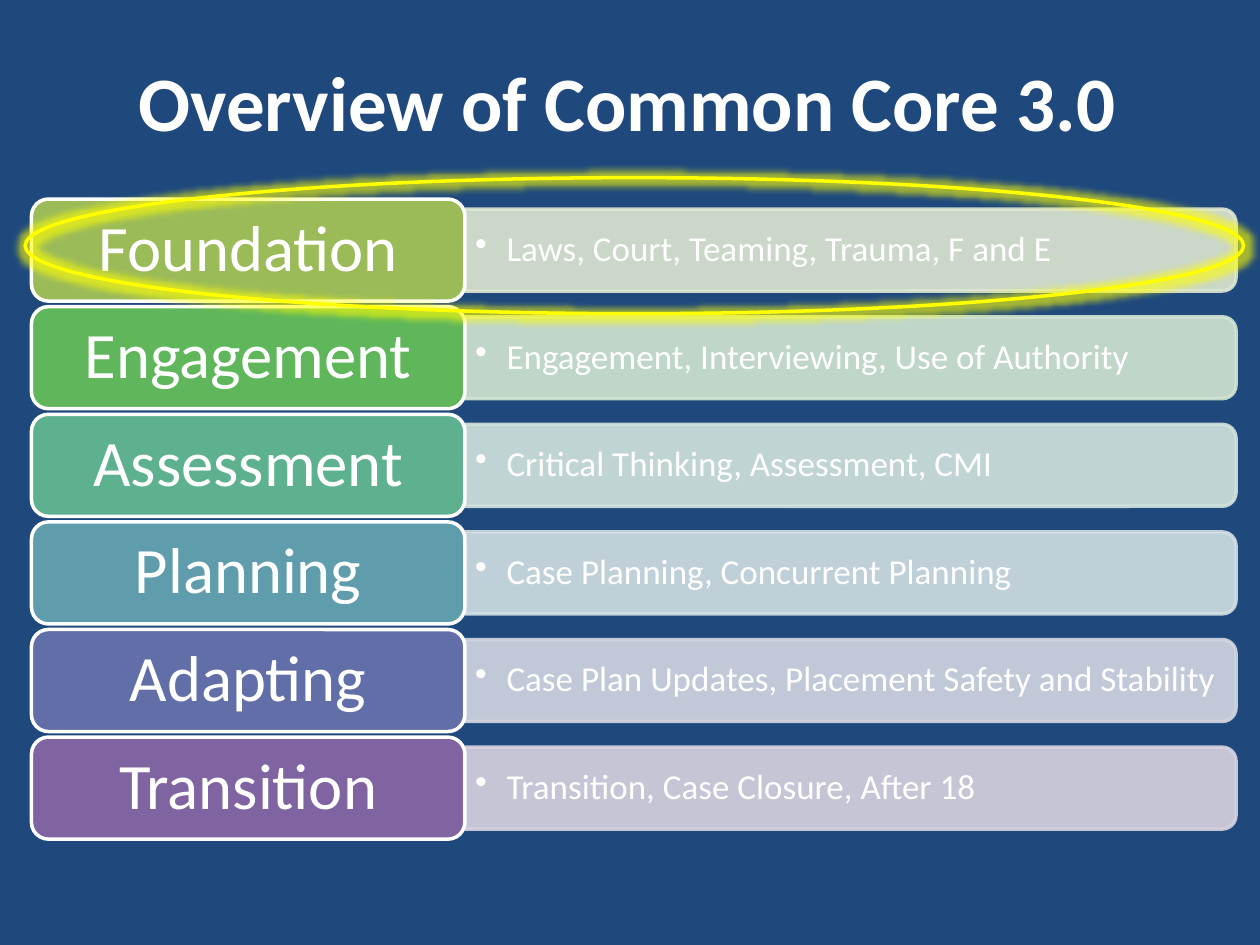
from lxml import etree
from pptx import Presentation
from pptx.dml.color import RGBColor
from pptx.enum.shapes import MSO_SHAPE as Preset
from pptx.enum.text import MSO_ANCHOR as Anchor, PP_ALIGN as Align
from pptx.oxml.ns import qn
from pptx.util import Inches, Pt

WHITE = "FFFFFF"
YELLOW = "FFFF00"
NAVY = "1F497D"

# Label, topics, label colour, band colour
MODULES = [
    ("Foundation", "Laws, Court, Teaming, Trauma, F and E", "9BBB59", "DEE7D1"),
    ("Engagement", "Engagement, Interviewing, Use of Authority", "5FB65B", "D2E6D2"),
    ("Assessment", "Critical Thinking, Assessment, CMI", "5DB18E", "D2E4DD"),
    ("Planning", "Case Planning, Concurrent Planning", "5F9DAC", "D2DFE3"),
    ("Adapting", "Case Plan Updates, Placement Safety and Stability", "626EA7", "D3D6E1"),
    ("Transition", "Transition, Case Closure, After 18", "8064A2", "D8D3E0"),
]


def color(hex_string):
    return RGBColor.from_string(hex_string)


def add_alpha(color_element, percent):
    alpha = etree.SubElement(color_element, qn("a:alpha"))
    alpha.set("val", str(percent * 1000))


def write_text(shape, text, size, align, insets, bold=False, line_spacing=1.0):
    """Write one white, vertically centred paragraph and return it."""
    frame = shape.text_frame
    side, edge = Inches(insets[0]), Inches(insets[1])
    frame_format = {
        "word_wrap": True, "vertical_anchor": Anchor.MIDDLE,
        "margin_left": side, "margin_right": side,
        "margin_top": edge, "margin_bottom": edge,
    }
    for name, value in frame_format.items():
        setattr(frame, name, value)
    paragraph = frame.paragraphs[0]
    paragraph.alignment = align
    paragraph.line_spacing = line_spacing
    run = paragraph.add_run()
    run.text = text
    for name, value in {"name": "Calibri", "size": Pt(size), "bold": bold}.items():
        setattr(run.font, name, value)
    run.font.color.rgb = color(WHITE)
    return paragraph


def add_bullet(paragraph, indent):
    properties = paragraph._p.get_or_add_pPr()
    properties.set("marL", str(Inches(indent)))
    properties.set("indent", str(-Inches(indent)))
    etree.SubElement(properties, qn("a:buChar")).set("char", "•")


def add_outlined(slide, preset, box, line_color, fill_color=None, opacity=100):
    shape = slide.shapes.add_shape(preset, *map(Inches, box))
    shape.shadow.inherit = False
    shape.line.width = Pt(2)
    shape.line.color.rgb = color(line_color)
    if fill_color:
        shape.fill.solid()
        shape.fill.fore_color.rgb = color(fill_color)
    else:
        shape.fill.background()
    if opacity < 100:
        for color_element in shape._element.spPr.iter(qn("a:srgbClr")):
            add_alpha(color_element, opacity)
    return shape


def add_title(slide, box):
    title = slide.shapes.add_textbox(*map(Inches, box))
    write_text(title, "Overview of Common Core 3.0", 44, Align.LEFT, (0.1, 0.05), bold=True)


def add_module_row(slide, box, label, topics, label_color, band_color):
    left, top, width, height = box
    label_width, band_height = 3.44, 0.65
    band_left, band_width = left + label_width, width - label_width
    middle = top + height / 2

    # Band: an upright tab turned so its rounded end faces right
    band_box = (band_left + (band_width - band_height) / 2, middle - band_width / 2,
                band_height, band_width)
    band = add_outlined(slide, Preset.ROUND_2_SAME_RECTANGLE, band_box,
                        band_color, band_color, opacity=90)
    band.rotation = 90

    # Topics
    text_height = 0.59
    text_box = (band_left, middle - text_height / 2, band_width - 0.03, text_height)
    topic_box = slide.shapes.add_textbox(*map(Inches, text_box))
    paragraph = write_text(topic_box, topics, 20, Align.LEFT, (0.08, 0.04), line_spacing=0.9)
    add_bullet(paragraph, 0.25)

    # Label
    label_shape = add_outlined(slide, Preset.ROUNDED_RECTANGLE,
                               (left, top, label_width, height), WHITE, label_color)
    write_text(label_shape, label, 37, Align.CENTER, (0.15, 0.08), line_spacing=0.9)


def add_module_list(slide, box):
    left, top, width, height = box
    row_height = 0.81
    pitch = (height - row_height) / (len(MODULES) - 1)
    for index, module in enumerate(MODULES):
        add_module_row(slide, (left, top + index * pitch, width, row_height), *module)


def add_highlight(slide, box):
    ellipse = add_outlined(slide, Preset.OVAL, box, YELLOW)
    effects = ellipse._element.spPr.find(qn("a:effectLst"))
    glow = etree.SubElement(effects, qn("a:glow"), rad=str(Pt(8)))
    add_alpha(etree.SubElement(glow, qn("a:srgbClr"), val=YELLOW), 60)


def main():
    presentation = Presentation()
    presentation.slide_width, presentation.slide_height = Inches(10), Inches(7.5)
    slide = presentation.slides.add_slide(presentation.slide_layouts[6])
    slide.background.fill.solid()
    slide.background.fill.fore_color.rgb = color(NAVY)

    add_title(slide, (1, 0.17, 9, 1.25))
    add_module_list(slide, (0.25, 1.58, 9.56, 5.08))
    add_highlight(slide, (0.2, 1.41, 9.67, 1.08))
    presentation.save("out.pptx")


if __name__ == "__main__":
    main()
